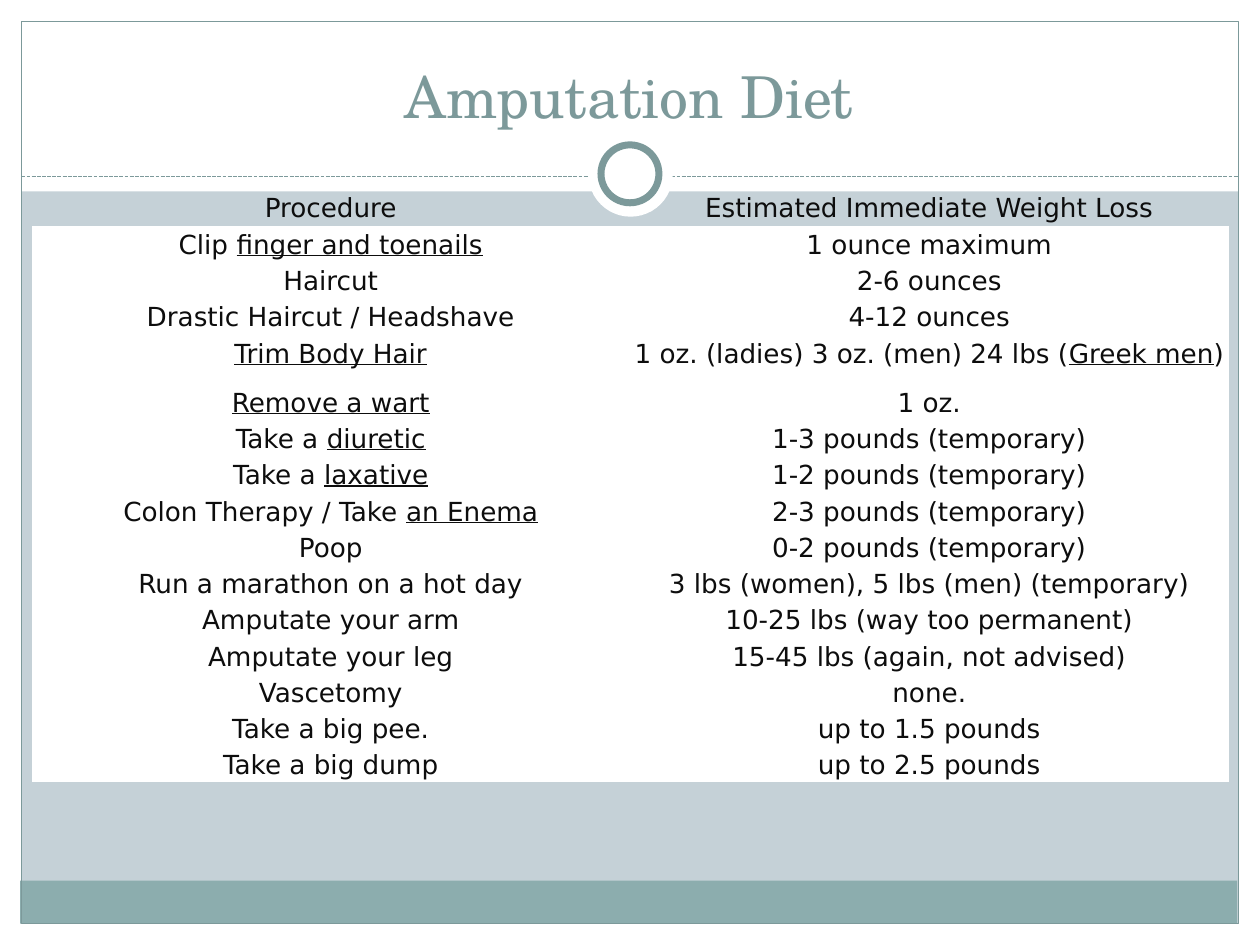
from pptx import Presentation
from pptx.dml.color import RGBColor
from pptx.enum.dml import MSO_LINE
from pptx.enum.shapes import MSO_CONNECTOR, MSO_SHAPE
from pptx.enum.text import MSO_ANCHOR, PP_ALIGN
from pptx.oxml.ns import qn
from pptx.util import Inches, Pt
from lxml import etree

COLORS = {
    "background": "C5D1D7",
    "white": "FFFFFF",
    "footer": "8CADAE",
    "accent": "7C999A",
    "text": "0D0D0D",
}
TITLE_FORMAT = {"name": "TeX Gyre Schola", "size": Pt(33)}
CELL_FORMAT = {"name": "DejaVu Sans", "size": Pt(15)}
NO_MARGINS = {"margin_left": 0, "margin_top": 0, "margin_right": 0, "margin_bottom": 0}
PLAIN_TABLE = {"first_row": False, "horz_banding": False}
NO_GRID_STYLE = "{2D5ABB26-0587-4C30-8999-92F81FD0307C}"

# Underscores enclose underlined words
ROWS = [
    ("Procedure", "Estimated Immediate Weight Loss"),
    ("Clip _finger and toenails_", "1 ounce maximum"),
    ("Haircut", "2-6 ounces"),
    ("Drastic Haircut / Headshave", "4-12 ounces"),
    ("_Trim Body Hair_", "1 oz. (ladies) 3 oz. (men) 24 lbs (_Greek men_)"),
    ("_Remove a wart_", "1 oz."),
    ("Take a _diuretic_", "1-3 pounds (temporary)"),
    ("Take a _laxative_", "1-2 pounds (temporary)"),
    ("Colon Therapy / Take _an Enema_", "2-3 pounds (temporary)"),
    ("Poop", "0-2 pounds (temporary)"),
    ("Run a marathon on a hot day", "3 lbs (women), 5 lbs (men) (temporary)"),
    ("Amputate your arm", "10-25 lbs (way too permanent)"),
    ("Amputate your leg", "15-45 lbs (again, not advised)"),
    ("Vascetomy", "none."),
    ("Take a big pee.", "up to 1.5 pounds"),
    ("Take a big dump", "up to 2.5 pounds"),
]
TALL_ROWS = {0: 0.29, 4: 0.39}
ROW_HEIGHT = 0.2


def apply_format(target, values):
    for name, value in values.items():
        setattr(target, name, value)


def color(name):
    return RGBColor.from_string(COLORS[name])


class SlideBuilder:
    def __init__(self, slide):
        self.slide = slide

    def background(self, fill):
        self.slide.background.fill.solid()
        self.slide.background.fill.fore_color.rgb = color(fill)

    def shape(self, kind, box, fill=None, line_width=None):
        shape = self.slide.shapes.add_shape(kind, *map(Inches, box))
        shape.shadow.inherit = False
        if fill:
            shape.fill.solid()
            shape.fill.fore_color.rgb = color(fill)
        else:
            shape.fill.background()
        if line_width:
            shape.line.color.rgb = color("accent")
            shape.line.width = Pt(line_width)
        else:
            shape.line.fill.background()

    def dashed_line(self, start, end):
        line = self.slide.shapes.add_connector(
            MSO_CONNECTOR.STRAIGHT, *map(Inches, start + end))
        line.line.color.rgb = color("accent")
        apply_format(line.line, {"width": Pt(0.75), "dash_style": MSO_LINE.SQUARE_DOT})
        etree.SubElement(line._element.spPr, qn("a:effectLst"))

    def fill_paragraph(self, paragraph, text, font_format, text_color):
        paragraph.alignment = PP_ALIGN.CENTER
        for index, part in enumerate(text.split("_")):
            if part:
                run = paragraph.add_run()
                run.text = part
                apply_format(run.font, font_format)
                run.font.color.rgb = color(text_color)
                if index % 2:
                    run.font.underline = True

    def title(self, text, box):
        frame = self.slide.shapes.add_textbox(*map(Inches, box)).text_frame
        apply_format(frame, {"word_wrap": True, "vertical_anchor": MSO_ANCHOR.BOTTOM})
        self.fill_paragraph(frame.paragraphs[0], text, TITLE_FORMAT, "accent")

    def table(self, rows, box):
        table_shape = self.slide.shapes.add_table(
            len(rows), len(rows[0]), *map(Inches, box))
        table = table_shape.table
        apply_format(table, PLAIN_TABLE)
        table._tbl.tblPr.find(qn("a:tableStyleId")).text = NO_GRID_STYLE
        for row_index, texts in enumerate(rows):
            table.rows[row_index].height = Inches(TALL_ROWS.get(row_index, ROW_HEIGHT))
            for column_index, text in enumerate(texts):
                cell = table.cell(row_index, column_index)
                apply_format(cell, NO_MARGINS)
                if row_index:
                    cell.fill.solid()
                    cell.fill.fore_color.rgb = color("white")
                else:
                    cell.fill.background()
                paragraph = cell.text_frame.paragraphs[0]
                paragraph.line_spacing = 1.15
                self.fill_paragraph(paragraph, text, CELL_FORMAT, "text")
        table_shape.height = Inches(box[3])


def main():
    presentation = Presentation()
    apply_format(presentation, {"slide_width": Inches(10), "slide_height": Inches(7.5)})
    builder = SlideBuilder(presentation.slides.add_slide(presentation.slide_layouts[6]))
    builder.background("background")

    # White margins: bottom, top, left, right
    for box in [(0, 7.33, 10, 0.17), (0, 0, 10, 1.52),
                (0, 0, 0.17, 7.5), (9.83, 0, 0.17, 7.5)]:
        builder.shape(MSO_SHAPE.RECTANGLE, box, "white")

    # Footer band and frame
    builder.shape(MSO_SHAPE.RECTANGLE, (0.16, 6.99, 9.66, 0.34), "footer")
    builder.shape(MSO_SHAPE.RECTANGLE, (0.17, 0.17, 9.66, 7.16), line_width=0.75)

    # Divider with ring
    builder.dashed_line((0.17, 1.4), (9.83, 1.4))
    builder.shape(MSO_SHAPE.OVAL, (4.67, 1.05, 0.67, 0.67), "white")
    builder.shape(MSO_SHAPE.OVAL, (4.77, 1.15, 0.46, 0.46), "white", 4)

    # Title and table
    builder.title("Amputation Diet", (0.33, 0.25, 9.33, 0.83))
    builder.table(ROWS, (0.25, 1.5, 9.5, 4.89))

    presentation.save("out.pptx")


if __name__ == "__main__":
    main()
